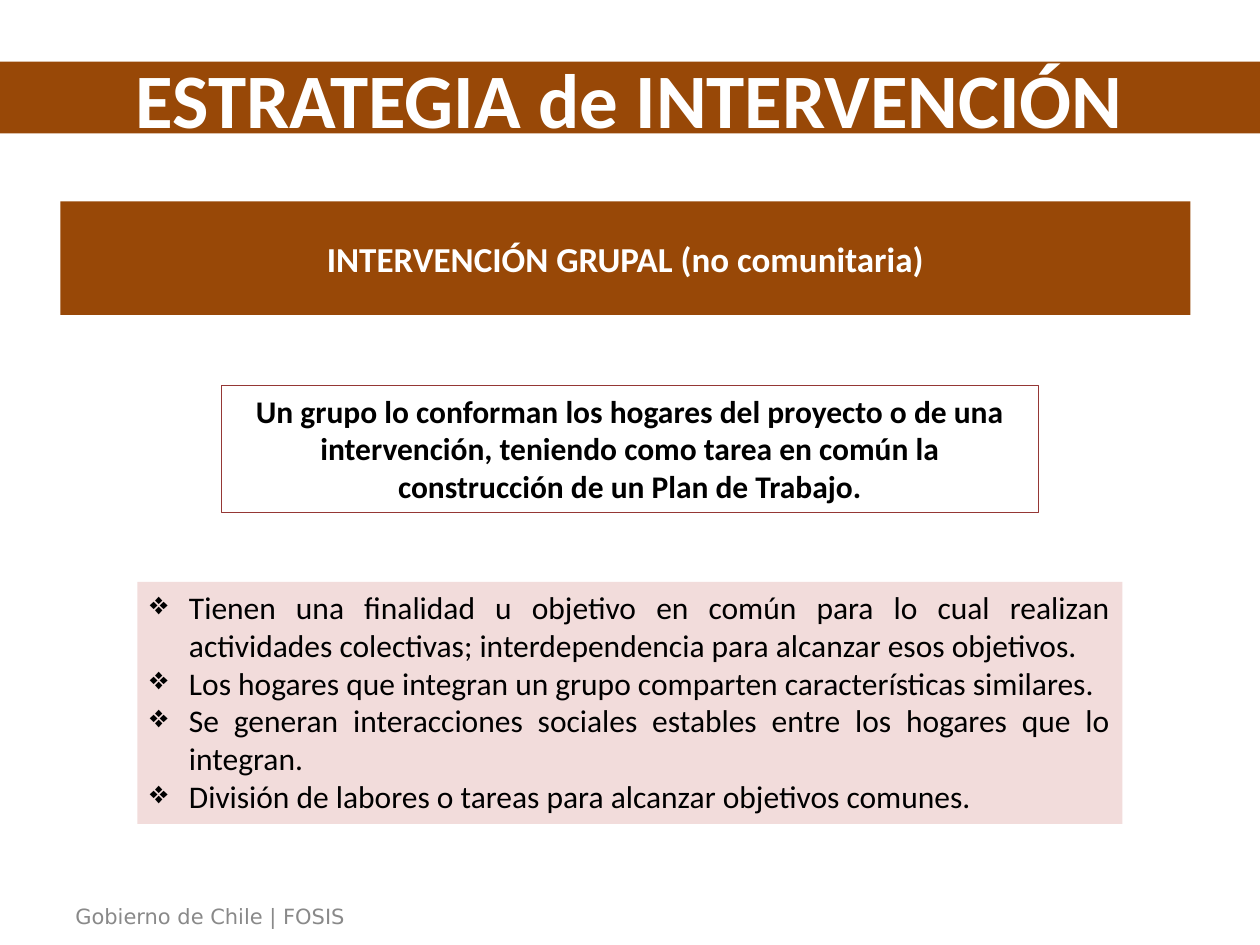
from lxml.etree import SubElement
from pptx import Presentation
from pptx.dml.color import RGBColor
from pptx.enum.shapes import MSO_SHAPE as Shape
from pptx.enum.text import MSO_ANCHOR as Anchor, MSO_AUTO_SIZE as AutoSize, PP_ALIGN as Align
from pptx.oxml.ns import qn
from pptx.util import Cm, Pt

COLORS = {
    "brown": "984807",
    "red": "953735",
    "pink": "F2DCDB",
    "white": "FFFFFF",
    "black": "000000",
    "gray": "898989",
}
DEFINITION = (
    "Un grupo lo conforman los hogares del proyecto o de una intervención, "
    "teniendo como tarea en común la construcción de un Plan de Trabajo."
)
TRAITS = [
    "Tienen una finalidad u objetivo en común para lo cual realizan actividades "
    "colectivas; interdependencia para alcanzar esos objetivos.",
    "Los hogares que integran un grupo comparten características similares.",
    "Se generan interacciones sociales estables entre los hogares que lo integran.",
    "División de labores o tareas para alcanzar objetivos comunes.",
]


def color(name):
    return RGBColor.from_string(COLORS[name])


def add_bullet(para, char, indent):
    props = para._p.get_or_add_pPr()
    props.set("marL", str(indent))
    props.set("indent", str(-indent))
    SubElement(props, qn("a:buChar")).set("char", char)


def write(shape, lines, size=18, ink="black", bold=False, font="Calibri",
          align=Align.CENTER, anchor=Anchor.TOP, inset=None, wrap=True, bullet=None):
    frame = shape.text_frame
    frame.word_wrap = wrap
    frame.auto_size = AutoSize.NONE
    frame.vertical_anchor = anchor
    if inset is not None:
        frame.margin_left = frame.margin_right = inset
        frame.margin_top = frame.margin_bottom = inset
    for number, line in enumerate(lines):
        para = frame.paragraphs[0] if number == 0 else frame.add_paragraph()
        para.alignment = align
        if bullet:
            add_bullet(para, bullet, Cm(0.79))
        span = para.add_run()
        span.text = line
        span.font.name = font
        span.font.size = Pt(size)
        span.font.bold = bold
        span.font.color.rgb = color(ink)


def add_panel(page, box, fill=None, line=None):
    panel = page.shapes.add_shape(Shape.RECTANGLE, *box)
    panel.shadow.inherit = False
    if fill:
        panel.fill.solid()
        panel.fill.fore_color.rgb = color(fill)
    else:
        panel.fill.background()
    if line:
        panel.line.color.rgb = color(line)
        panel.line.width = Pt(0.75)
    else:
        panel.line.fill.background()
    return panel


def place_title(page, box):
    title = page.shapes.title
    title.left, title.top, title.width, title.height = box
    title.fill.solid()
    title.fill.fore_color.rgb = color("brown")
    write(title, ["ESTRATEGIA de INTERVENCIÓN"], size=44, ink="white", bold=True,
          anchor=Anchor.MIDDLE, inset=Cm(0.25))


def add_heading(page, box):
    write(add_panel(page, box, fill="brown"), ["INTERVENCIÓN GRUPAL (no comunitaria)"],
          size=20, ink="white", bold=True, anchor=Anchor.MIDDLE, inset=Cm(0.25))


def add_definition(page, box):
    write(add_panel(page, box, line="red"), [DEFINITION], bold=True)


def add_traits(page, box):
    write(add_panel(page, box, fill="pink"), TRAITS, align=Align.JUSTIFY, bullet="❖")


def add_footer(page, box):
    write(page.shapes.add_textbox(*box), ["Gobierno de Chile | FOSIS"], size=12,
          ink="gray", font="DejaVu Sans", align=Align.LEFT, wrap=False)


def main():
    deck = Presentation()
    deck.slide_width, deck.slide_height = Cm(25.4), Cm(19.05)
    page = deck.slides.add_slide(deck.slide_layouts[5])
    add_footer(page, (Cm(1.27), Cm(18.08), Cm(6.17), Cm(0.76)))
    place_title(page, (0, Cm(1.24), deck.slide_width, Cm(1.45)))
    add_definition(page, (Cm(4.47), Cm(7.77), Cm(16.46), Cm(2.57)))
    add_heading(page, (Cm(1.22), Cm(4.06), Cm(22.78), Cm(2.29)))
    add_traits(page, (Cm(2.77), Cm(11.73), Cm(19.86), Cm(4.88)))
    deck.save("out.pptx")


if __name__ == "__main__":
    main()
